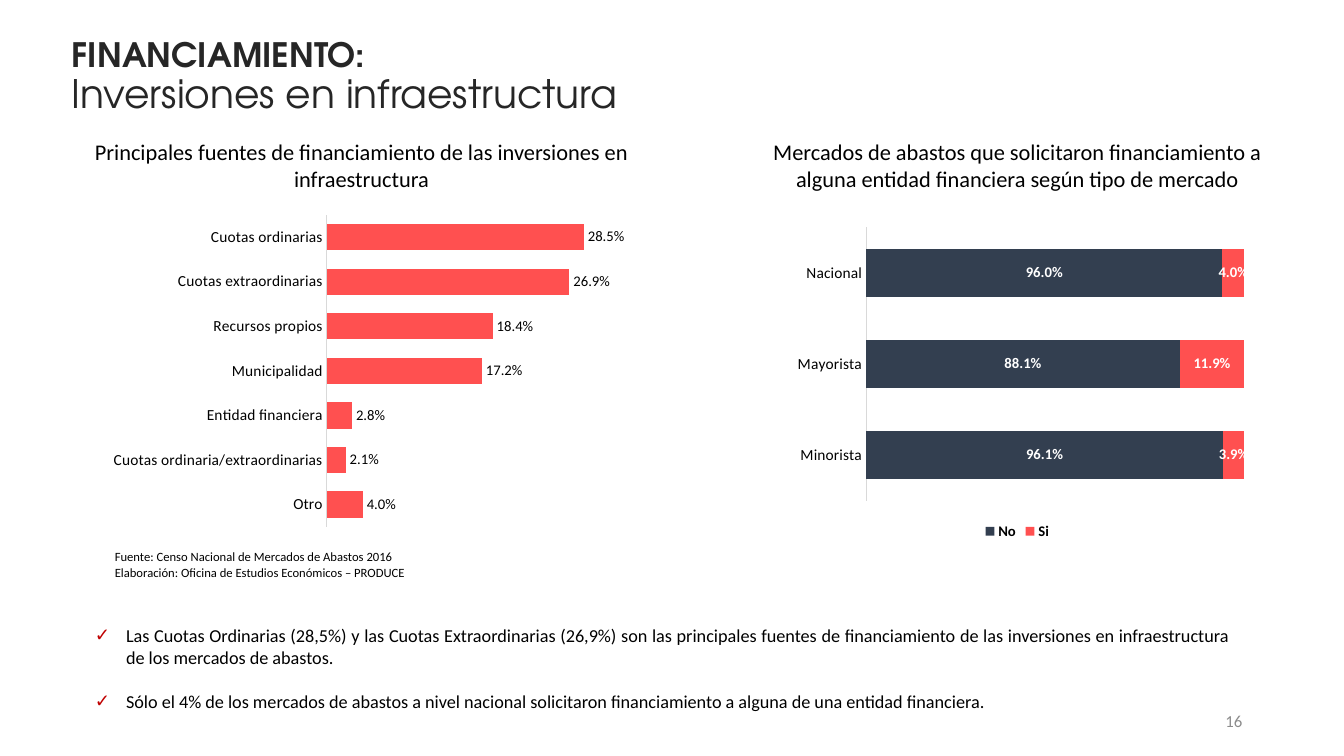
from lxml import etree
from pptx import Presentation
from pptx.chart.data import CategoryChartData
from pptx.dml.color import RGBColor
from pptx.enum.chart import XL_CHART_TYPE, XL_LABEL_POSITION, XL_LEGEND_POSITION, XL_TICK_MARK
from pptx.enum.text import MSO_ANCHOR, MSO_AUTO_SIZE, PP_ALIGN
from pptx.oxml import parse_xml
from pptx.oxml.ns import nsdecls, qn
from pptx.util import Inches, Pt

COLORS = {"black": "000000", "title": "262626", "number": "8C8C8C", "white": "FFFFFF",
          "red": "FF5050", "navy": "333F50", "axis": "D9D9D9", "check": "C00000"}


def set_font(font, size, color="black", bold=False, name="Calibri"):
    for attribute, value in {"size": Pt(size), "bold": bold, "name": name}.items():
        setattr(font, attribute, value)
    font.color.rgb = RGBColor.from_string(COLORS[color])


def place(shape, box, anchor=MSO_ANCHOR.TOP):
    """Move the shape to its box in inches and fix how its text wraps."""
    for side, length in zip(("left", "top", "width", "height"), box):
        setattr(shape, side, Inches(length))
    frame = shape.text_frame
    settings = {"word_wrap": True, "auto_size": MSO_AUTO_SIZE.NONE, "vertical_anchor": anchor}
    for attribute, value in settings.items():
        setattr(frame, attribute, value)
    return frame


presentation = Presentation()
presentation.slide_width = Inches(13.33)
presentation.slide_height = Inches(7.5)
slide = presentation.slides.add_slide(presentation.slide_layouts[1])

# Title
title = place(slide.shapes.title, (0.61, 0.25, 12.44, 1.05), MSO_ANCHOR.MIDDLE).paragraphs[0]
title.alignment = PP_ALIGN.LEFT
title.line_spacing = 0.9
heading = title.add_run()
heading.text = "FINANCIAMIENTO:"
set_font(heading.font, 24, "title", True, "TeX Gyre Adventor")
title.add_line_break()
subheading = title.add_run()
subheading.text = "Inversiones en infraestructura"
set_font(subheading.font, 28, "title", False, "TeX Gyre Adventor")

# Findings
findings = [
    "Las Cuotas Ordinarias (28,5%) y las Cuotas Extraordinarias (26,9%) son las principales fuentes "
    "de financiamiento de las inversiones en infraestructura de los mercados de abastos.",
    "Sólo el 4% de los mercados de abastos a nivel nacional solicitaron financiamiento a alguna "
    "de una entidad financiera.",
]
body = place(slide.placeholders[1], (0.84, 6.14, 11.44, 0.98))
for index, finding in enumerate(findings):
    paragraph = body.paragraphs[0] if index == 0 else body.add_paragraph()
    properties = paragraph._p.get_or_add_pPr()
    properties.set("marL", str(Inches(0.31)))
    properties.set("indent", str(-Inches(0.31)))
    bullet_color = etree.SubElement(properties, qn("a:buClr"))
    etree.SubElement(bullet_color, qn("a:srgbClr"), val=COLORS["check"])
    etree.SubElement(properties, qn("a:buChar"), char="✓")
    paragraph.alignment = PP_ALIGN.JUSTIFY
    paragraph.space_before = Pt(16 * index)
    run = paragraph.add_run()
    run.text = finding
    set_font(run.font, 13)

# Chart headings, source note and page number
texts = [
    ((0.84, 1.32, 5.49, 0.64), 16, "black", PP_ALIGN.CENTER, MSO_ANCHOR.TOP,
     ["Principales fuentes de financiamiento de las inversiones en infraestructura"]),
    ((7.46, 1.32, 5.26, 0.64), 16, "black", PP_ALIGN.CENTER, MSO_ANCHOR.TOP,
     ["Mercados de abastos que solicitaron financiamiento a alguna entidad financiera "
      "según tipo de mercado"]),
    ((1.04, 5.4, 6.21, 0.4), 9, "black", PP_ALIGN.LEFT, MSO_ANCHOR.TOP,
     ["Fuente: Censo Nacional de Mercados de Abastos 2016",
      "Elaboración: Oficina de Estudios Económicos – PRODUCE"]),
    ((9.42, 6.95, 3, 0.4), 12, "number", PP_ALIGN.RIGHT, MSO_ANCHOR.MIDDLE, ["16"]),
]
for box, size, color, alignment, anchor, lines in texts:
    frame = place(slide.shapes.add_textbox(0, 0, 0, 0), box, anchor)
    for index, line in enumerate(lines):
        paragraph = frame.paragraphs[0] if index == 0 else frame.add_paragraph()
        paragraph.alignment = alignment
        run = paragraph.add_run()
        run.text = line
        set_font(run.font, size, color)

# Charts
charts = [
    {"type": XL_CHART_TYPE.BAR_CLUSTERED, "box": (0.76, 1.96, 5.64, 3.44),
     "categories": ["Cuotas ordinarias", "Cuotas extraordinarias", "Recursos propios", "Municipalidad",
                    "Entidad financiera", "Cuotas ordinaria/extraordinarias", "Otro"],
     "series": [("Fuentes", (0.285, 0.269, 0.184, 0.172, 0.028, 0.021, 0.04), "red")],
     "gap": 70, "overlap": 0, "range": (0, 0.3), "reverse": True, "legend": False,
     "plot": (0.44, 0.05, 0.476, 0.9), "label": ("black", False, XL_LABEL_POSITION.OUTSIDE_END)},
    {"type": XL_CHART_TYPE.BAR_STACKED_100, "box": (7.59, 2.09, 5, 3.31),
     "categories": ["Minorista", "Mayorista", "Nacional"],
     "series": [("No", (0.961, 0.881, 0.96), "navy"), ("Si", (0.039, 0.119, 0.04), "red")],
     "gap": 90, "overlap": 100, "range": (0.3, 1), "reverse": False, "legend": True,
     "plot": (0.2, 0.05, 0.75, 0.82), "label": ("white", True, XL_LABEL_POSITION.CENTER)},
]
for settings in charts:
    data = CategoryChartData(number_format="0.0%")
    data.categories = settings["categories"]
    for name, values, color in settings["series"]:
        data.add_series(name, values)
    box = [Inches(length) for length in settings["box"]]
    chart = slide.shapes.add_chart(settings["type"], *box, data).chart
    set_font(chart.font, 10)
    chart.has_title = False
    chart.has_legend = settings["legend"]
    if chart.has_legend:
        chart.legend.position = XL_LEGEND_POSITION.BOTTOM
        chart.legend.include_in_layout = False
        set_font(chart.legend.font, 10.5, bold=True)

    category_axis = chart.category_axis
    category_axis.major_tick_mark = XL_TICK_MARK.NONE
    category_axis.reverse_order = settings["reverse"]
    category_axis.format.line.color.rgb = RGBColor.from_string(COLORS["axis"])
    category_axis.format.line.width = Pt(0.75)
    set_font(category_axis.tick_labels.font, 11)
    value_axis = chart.value_axis
    value_axis.minimum_scale, value_axis.maximum_scale = settings["range"]
    value_axis.has_major_gridlines = False
    value_axis.visible = False

    plot = chart.plots[0]
    plot.gap_width = settings["gap"]
    plot.overlap = settings["overlap"]
    plot.vary_by_categories = False
    label_color, label_bold, label_position = settings["label"]
    for series, (name, values, color) in zip(plot.series, settings["series"]):
        series.format.fill.solid()
        series.format.fill.fore_color.rgb = RGBColor.from_string(COLORS[color])
        labels = series.data_labels
        label_format = {"show_value": True, "number_format": "0.0%",
                        "number_format_is_linked": False, "position": label_position}
        for attribute, value in label_format.items():
            setattr(labels, attribute, value)
        set_font(labels.font, 10.5, label_color, label_bold)

    plot_area = chart._chartSpace.find(".//" + qn("c:plotArea"))
    for layout in plot_area.findall(qn("c:layout")):
        plot_area.remove(layout)
    shares = "".join(f'<c:{tag} val="{share}"/>' for tag, share in zip("xywh", settings["plot"]))
    plot_area.insert(0, parse_xml(
        f'<c:layout {nsdecls("c")}><c:manualLayout><c:layoutTarget val="inner"/>'
        f'<c:xMode val="edge"/><c:yMode val="edge"/>{shares}</c:manualLayout></c:layout>'))

presentation.save("out.pptx")
